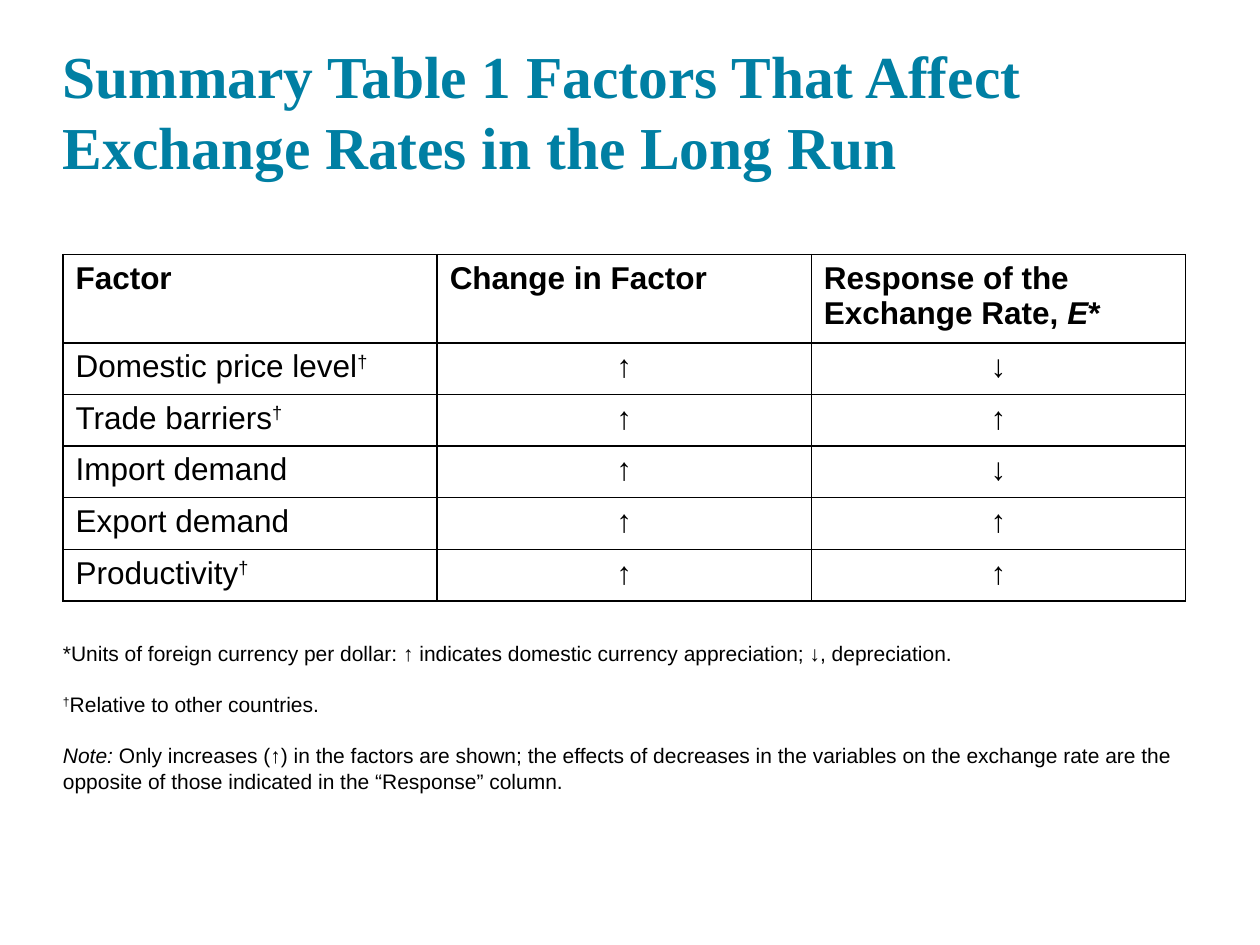
from dataclasses import dataclass

from lxml import etree
from pptx import Presentation
from pptx import util as u
from pptx.dml.color import RGBColor
from pptx.enum import text
from pptx.oxml.ns import qn

WIDTH, HEIGHT = 10, 7.5
MARGIN = WIDTH * 0.05
COL_W, ROW_H, HEADER_H = 2.97, 0.41, 0.66
TABLE_TOP = 2.02
TEAL, BLACK = "007FA3", "000000"
UP, DOWN = "↑", "↓"


@dataclass(frozen=True)
class Style:
    size: float
    font: str = "Arial"
    color: str = BLACK
    bold: bool = False


@dataclass(frozen=True)
class Run:
    words: str
    italic: bool = False
    raised: bool = False


@dataclass(frozen=True)
class Factor:
    name: str
    response: str
    relative: bool = False


TITLE = Style(34, "Times New Roman", TEAL, True)
HEADER, BODY, NOTE = Style(18, bold=True), Style(18), Style(12)
DAGGER = Run("†", raised=True)

HEADINGS = [
    [Run("Factor")],
    [Run("Change in Factor")],
    [Run("Response of the Exchange Rate, "), Run("E", italic=True), Run("*")],
]
FACTORS = [
    Factor("Domestic price level", DOWN, True),
    Factor("Trade barriers", UP, True),
    Factor("Import demand", DOWN),
    Factor("Export demand", UP),
    Factor("Productivity", UP, True),
]
NOTES = [
    [Run("*Units of foreign currency per dollar: ↑ indicates domestic currency "
         "appreciation; ↓, depreciation.")],
    [DAGGER, Run("Relative to other countries.")],
    [Run("Note: ", italic=True),
     Run("Only increases (↑) in the factors are shown; the effects of decreases in the "
         "variables on the exchange rate are the opposite of those indicated in the "
         "“Response” column.")],
]


def rgb(value: str) -> RGBColor:
    return RGBColor.from_string(value)


def add_runs(p, runs: list[Run], style: Style) -> None:
    for run in runs:
        r = p.add_run()
        r.text = run.words
        f = r.font
        f.size, f.name, f.bold, f.italic = u.Pt(style.size), style.font, style.bold, run.italic
        f.color.rgb = rgb(style.color)
        if run.raised:
            f._element.set("baseline", "30000")


def add_text(s, top: float, height: float, paragraphs: list[list[Run]], style: Style,
             anchor=text.MSO_ANCHOR.TOP, gap: float = 0, spacing: float = 1.0) -> None:
    sp = s.shapes.add_textbox(u.Inches(MARGIN), u.Inches(top),
                              u.Inches(WIDTH - 2 * MARGIN), u.Inches(height))
    tf = sp.text_frame
    tf.word_wrap, tf.vertical_anchor = True, anchor
    tf.margin_left = tf.margin_right = tf.margin_top = tf.margin_bottom = 0
    for i, runs in enumerate(paragraphs):
        p = tf.add_paragraph() if i else tf.paragraphs[0]
        p.line_spacing = spacing
        if i:
            p.space_before = u.Pt(gap)
        add_runs(p, runs, style)


def add_borders(cell, color: str = BLACK, width: float = 1) -> None:
    tc_pr = cell._tc.get_or_add_tcPr()
    for side in "LRTB":
        ln = etree.SubElement(tc_pr, qn(f"a:ln{side}"), w=str(u.Pt(width)))
        fill = etree.SubElement(ln, qn("a:solidFill"))
        etree.SubElement(fill, qn("a:srgbClr"), val=color)


def fill_cell(cell, runs: list[Run], style: Style, centred: bool = False) -> None:
    add_borders(cell)
    cell.fill.background()
    p = cell.text_frame.paragraphs[0]
    p.alignment = text.PP_ALIGN.CENTER if centred else text.PP_ALIGN.LEFT
    add_runs(p, runs, style)


def add_factor_table(s) -> None:
    rows, cols = len(FACTORS) + 1, len(HEADINGS)
    table = s.shapes.add_table(
        rows, cols, u.Inches(MARGIN), u.Inches(TABLE_TOP), u.Inches(cols * COL_W),
        u.Inches(HEADER_H + len(FACTORS) * ROW_H)).table
    table.first_row = table.horz_banding = False
    for column in table.columns:
        column.width = u.Inches(COL_W)
    for i, row in enumerate(table.rows):
        row.height = u.Inches(ROW_H if i else HEADER_H)
    for col, runs in enumerate(HEADINGS):
        fill_cell(table.cell(0, col), runs, HEADER)
    for row, factor in enumerate(FACTORS, start=1):
        name = [Run(factor.name)] + ([DAGGER] if factor.relative else [])
        fill_cell(table.cell(row, 0), name, BODY)
        for col, arrow in enumerate((UP, factor.response), start=1):
            fill_cell(table.cell(row, col), [Run(arrow)], BODY, centred=True)


def main() -> None:
    prs = Presentation()
    prs.slide_width, prs.slide_height = u.Inches(WIDTH), u.Inches(HEIGHT)
    s = prs.slides.add_slide(prs.slide_layouts[6])
    add_text(s, 0.24, 1.2, [[Run("Summary Table 1 Factors That Affect Exchange Rates "
                                 "in the Long Run")]],
             TITLE, anchor=text.MSO_ANCHOR.BOTTOM)
    add_factor_table(s)
    add_text(s, 5.08, 1.62, NOTES, NOTE, gap=15)
    prs.save("out.pptx")


if __name__ == "__main__":
    main()
